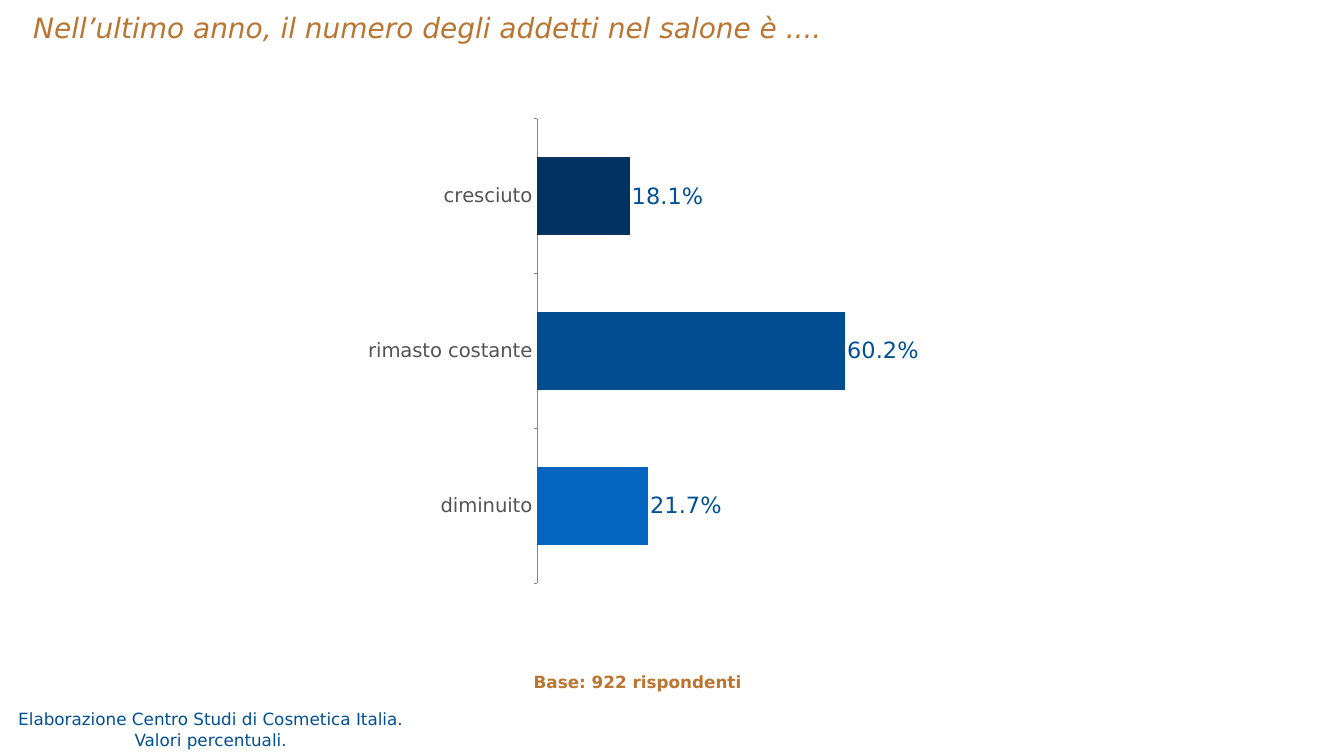
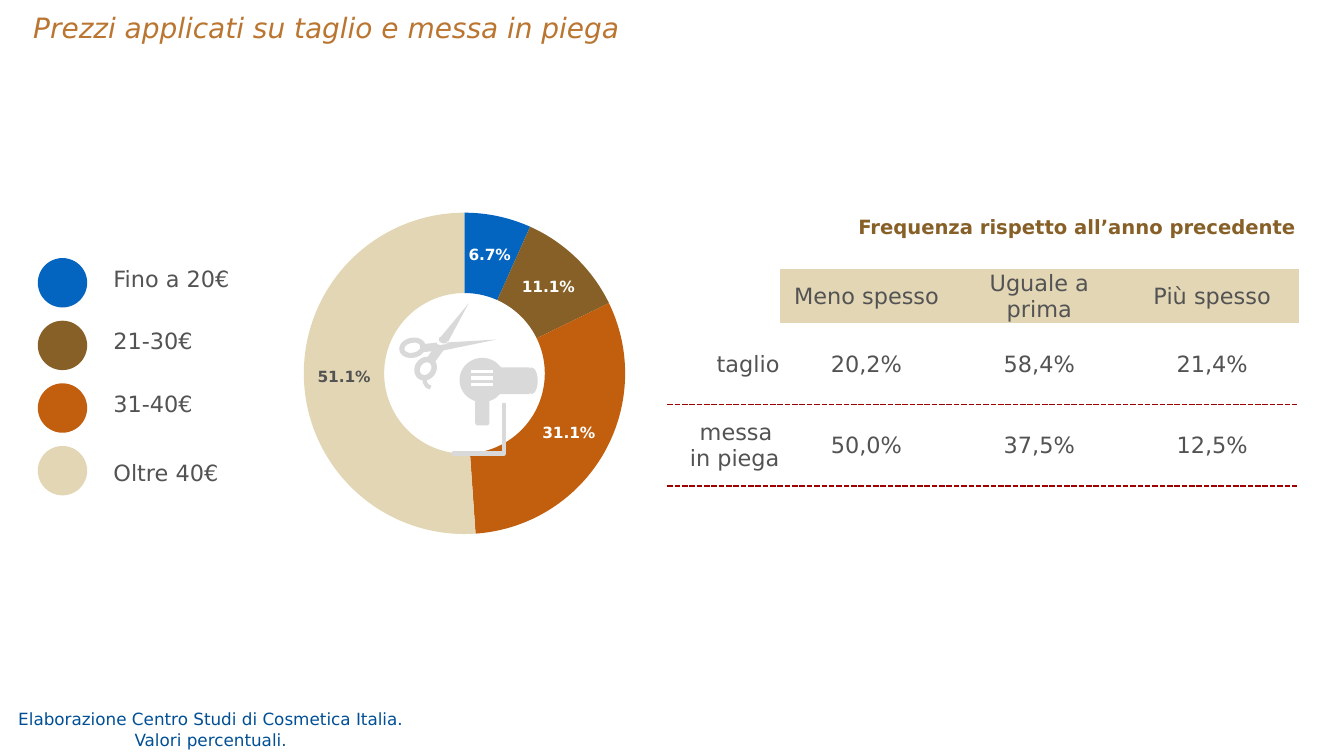
"""Builds two survey slides on salon staff and prices."""
from lxml import etree
from pptx import Presentation
from pptx import util as u
from pptx.chart import data as cd
from pptx.dml import color as col
from pptx.enum import chart as ch, dml, shapes as sh, text as tx
from pptx.oxml import ns

FONT = "DejaVu Sans"
HUE = {
    "copper": "BA7530", "navy": "014F95", "grey": "535353", "axis": "888888",
    "deep": "013260", "royal": "024C90", "blue": "0365C0", "brown": "876028",
    "rust": "C25F0E", "sand": "E2D6B5", "icon": "D9D9D9", "white": "FFFFFF",
    "red": "9E0000", "black": "000000",
}
PLAIN = "{2D5ABB26-0587-4C30-8999-92F81FD0307C}"
LEFT, MID, RIGHT = tx.PP_ALIGN.LEFT, tx.PP_ALIGN.CENTER, tx.PP_ALIGN.RIGHT
BANDS = ("blue", "brown", "rust", "sand")


def rgb(name):
    """Return a palette colour."""
    return col.RGBColor.from_string(HUE[name])


def inch(*nums):
    """Turn numbers into lengths."""
    return [u.Inches(n) for n in nums]


def style(font, size, hue, bold=False, slant=False):
    """Set the look of a font."""
    font.name, font.size = FONT, u.Pt(size)
    font.bold, font.italic = bold, slant
    font.color.rgb = rgb(hue)


def write(frame, words, size, hue, align=LEFT, space=None, **look):
    """Fill a text frame and style its lines."""
    frame.text = words
    for para in frame.paragraphs:
        para.alignment = align
        if space:
            para.line_spacing = space
        for run in para.runs:
            style(run.font, size, hue, **look)


def label(slide, box, words, size, hue, **look):
    """Add a text box whose text sits in the middle."""
    frame = slide.shapes.add_textbox(*inch(*box)).text_frame
    frame.word_wrap = True
    frame.auto_size = tx.MSO_AUTO_SIZE.SHAPE_TO_FIT_TEXT
    frame.vertical_anchor = tx.MSO_ANCHOR.MIDDLE
    frame.margin_left = frame.margin_right = u.Inches(0.06)
    frame.margin_top = frame.margin_bottom = u.Inches(0.06)
    write(frame, words, size, hue, **look)


def common(slide, title):
    """Add the title and the source footer."""
    label(slide, (0.6, 0.07, 25.44, 0.83), title, 40, "copper", space=1.2, slant=True)
    label(slide, (-0.03, 14.01, 8.42, 0.92),
          "Elaborazione Centro Studi di Cosmetica Italia.\nValori percentuali.",
          24, "navy", align=MID)


def plot_box(chart, *spot):
    """Fix the inner plot area as shares of the chart."""
    area = chart._chartSpace.chart.plotArea
    for old in area.findall(ns.qn("c:layout")):
        area.remove(old)
    layout = etree.Element(ns.qn("c:layout"))
    manual = etree.SubElement(layout, ns.qn("c:manualLayout"))
    pairs = [("layoutTarget", "inner"), ("xMode", "edge"), ("yMode", "edge")]
    for tag, val in pairs + list(zip("xywh", spot)):
        etree.SubElement(manual, ns.qn("c:" + tag)).set("val", str(val))
    area.insert(0, layout)


def graph(slide, box, kind, cats, vals, hues, spot):
    """Add a one-series percentage chart with coloured points."""
    data = cd.CategoryChartData(number_format="0.0%")
    data.categories = cats
    data.add_series("Series 1", vals)
    chart = slide.shapes.add_chart(kind, *inch(*box), data).chart
    chart.has_title = chart.has_legend = False
    style(chart.font, 24, "black")
    plot_box(chart, *spot)
    plot = chart.plots[0]
    for num, hue in enumerate(hues):
        fill = plot.series[0].points[num].format.fill
        fill.solid()
        fill.fore_color.rgb = rgb(hue)
    tags = plot.series[0].data_labels
    tags.show_value = True
    tags.number_format, tags.number_format_is_linked = "0.0%", False
    return chart, plot, tags


def bars(slide, box):
    """Add the bar chart of staff trends."""
    chart, plot, tags = graph(
        slide, box, ch.XL_CHART_TYPE.BAR_CLUSTERED,
        ("cresciuto", "rimasto costante", "diminuito"), (0.181, 0.602, 0.217),
        ("deep", "royal", "blue"), (0.443, 0, 0.463, 0.973))
    plot.gap_width, plot.vary_by_categories = 100, False
    style(tags.font, 32, "navy")
    tags.position = ch.XL_LABEL_POSITION.OUTSIDE_END
    names, scale = chart.category_axis, chart.value_axis
    names.reverse_order = True
    names.major_tick_mark = ch.XL_TICK_MARK.OUTSIDE
    names.format.line.color.rgb = rgb("axis")
    names.format.line.width = u.Pt(0.75)
    style(names.tick_labels.font, 28, "grey")
    scale.visible = scale.has_major_gridlines = False
    scale.minimum_scale, scale.maximum_scale = 0, 0.7


def ring(slide, box):
    """Add the doughnut of price bands."""
    _, plot, tags = graph(
        slide, box, ch.XL_CHART_TYPE.DOUGHNUT, ("1", "2", "3", "4"),
        (0.067, 0.111, 0.311, 0.511), BANDS, (0.14, 0, 0.755, 0.956))
    plot._element.find(ns.qn("c:holeSize")).set("val", "65")
    style(tags.font, 22, "white", bold=True)
    style(plot.series[0].points[3].data_label.font, 22, "grey", bold=True)


def solid(shapes, kind, box, hue, turn=0):
    """Add a filled shape without outline."""
    shape = shapes.add_shape(kind, *inch(*box))
    shape.shadow.inherit = False
    shape.fill.solid()
    shape.fill.fore_color.rgb = rgb(hue)
    shape.line.fill.background()
    shape.rotation = turn
    return shape


def stroke(shape, hue, width):
    """Leave only an outline on a shape."""
    shape.shadow.inherit = False
    shape.fill.background()
    shape.line.color.rgb = rgb(hue)
    shape.line.width = u.Pt(width)


def grid(slide, box, cols, rows):
    """Add a table without style."""
    table = slide.shapes.add_table(len(rows), len(cols), *inch(*box)).table
    table._tbl.tblPr.find(ns.qn("a:tableStyleId")).text = PLAIN
    table.first_row = table.horz_banding = False
    for part, size in list(zip(table.columns, cols)):
        part.width = u.Inches(size)
    for part, size in zip(table.rows, rows):
        part.height = u.Inches(size)
    for cell in table.iter_cells():
        cell.vertical_anchor = tx.MSO_ANCHOR.MIDDLE
    return table


def legend(slide, left, top):
    """Add the price bands beside their dots."""
    rows = (1.24, 1.24, 1.24, 1.52)
    table = grid(slide, (left + 1.4, top, 2.63, sum(rows)), (2.63,), rows)
    names = ("Fino a 20€", "21-30€", "31-40€", "Oltre 40€")
    for num, (name, hue) in enumerate(zip(names, BANDS)):
        cell = table.cell(num, 0)
        cell.fill.background()
        write(cell.text_frame, name, 32, "grey")
        solid(slide.shapes, sh.MSO_SHAPE.OVAL,
              (left, top + 0.19 + 1.243 * num, 0.98, 0.98), hue)


def dash(cell, *sides):
    """Draw dashed borders on the given sides of a cell."""
    props = cell._tc.get_or_add_tcPr()
    for side in sides:
        line = etree.SubElement(props, ns.qn("a:ln" + side), w=str(u.Pt(3)))
        fill = etree.SubElement(line, ns.qn("a:solidFill"))
        etree.SubElement(fill, ns.qn("a:srgbClr"), val=HUE["red"])
        etree.SubElement(line, ns.qn("a:prstDash"), val="sysDash")


def visits(slide, left, top):
    """Add the table of visit frequency and its heading."""
    rows = (
        ("", "Meno spesso", "Uguale a prima", "Più spesso"),
        ("taglio", "20,2%", "58,4%", "21,4%"),
        ("messa \nin piega", "50,0%", "37,5%", "12,5%"),
    )
    table = grid(slide, (left, top, 12.53, 4.29), (2.24, 3.43, 3.43, 3.43),
                 (1.07, 1.61, 1.61))
    for row, words in enumerate(rows):
        for num, word in enumerate(words):
            cell = table.cell(row, num)
            cell.margin_left = cell.margin_right = cell.margin_top = u.Inches(0.01)
            cell.margin_bottom = 0
            dash(cell, *("", "B", "TB")[row])
            if row == 0 and num:
                cell.fill.solid()
                cell.fill.fore_color.rgb = rgb("sand")
            else:
                cell.fill.background()
            write(cell.text_frame, word, 32, "grey", align=MID if num else RIGHT)
    label(slide, (left + 0.74, top - 1.21, 11.78, 0.66),
          "Frequenza rispetto all’anno precedente", 28, "brown",
          align=RIGHT, space=1.2, bold=True)


def shears(slide, left, top):
    """Draw the scissors."""
    shapes, kind = slide.shapes.add_group_shape().shapes, sh.MSO_SHAPE
    parts = (
        (kind.ISOSCELES_TRIANGLE, 1.04, 0, 0.18, 0.9, 34, "icon"),
        (kind.ISOSCELES_TRIANGLE, 1.3, 0.31, 0.16, 1.12, 82.5, "icon"),
        (kind.RECTANGLE, 0.42, 0.87, 0.44, 0.16, 353.7, "icon"),
        (kind.DONUT, 0, 0.76, 0.53, 0.4, 348.4, "icon"),
        (kind.OVAL, 0.75, 0.82, 0.22, 0.08, 352.1, "white"),
        (kind.OVAL, 0.78, 0.75, 0.18, 0.12, 23.2, "icon"),
        (kind.RECTANGLE, 0.52, 1.01, 0.37, 0.18, 305.8, "icon"),
        (kind.DONUT, 0.28, 1.16, 0.49, 0.43, 304.8, "icon"),
    )
    for form, x, y, wide, high, turn, hue in parts:
        solid(shapes, form, (left + x, top + y, wide, high), hue, turn)
    tail = shapes.add_shape(kind.ARC, *inch(left + 0.5, top + 1.38, 0.28, 0.37))
    tail.rotation = 184.5
    stroke(tail, "icon", 6)


def curve(start, *bends, steps=10):
    """Return points along joined cubic curves."""
    dots = [start]
    for one, two, end in bends:
        first = dots[-1]
        for num in range(1, steps + 1):
            t = num / steps
            s = 1 - t
            dots.append(tuple(
                s**3 * a + 3 * s * s * t * b + 3 * s * t * t * c + t**3 * d
                for a, b, c, d in zip(first, one, two, end)))
    return dots


def dryer(slide, left, top):
    """Draw the hair dryer with its cable."""
    shapes, kind = slide.shapes.add_group_shape().shapes, sh.MSO_SHAPE
    for form, x, y, wide, high in (
            (kind.OVAL, 1.31, 0.19, 0.24, 0.53),
            (kind.RECTANGLE, 0.63, 0.19, 0.76, 0.53),
            (kind.OVAL, 0, 0, 0.9, 0.88)):
        solid(shapes, form, (left + x, top + y, wide, high), "icon")
    for num in range(3):
        y = top + 0.27 + 0.13 * num
        vent = shapes.add_connector(
            sh.MSO_CONNECTOR.STRAIGHT, *inch(left + 0.23, y, left + 0.66, y))
        vent.line.color.rgb = rgb("white")
        vent.line.width = u.Pt(4.5)
        vent.line.dash_style = dml.MSO_LINE.SOLID
        etree.SubElement(vent._element.spPr, ns.qn("a:effectLst"))
    solid(shapes, kind.ROUNDED_RECTANGLE, (left + 0.31, top + 0.61, 0.28, 0.73), "icon")
    dots = [(left + x, top + y) for x, y in curve(
        (0.39, 0.72),
        ((0.43, 0.98), (0.46, 1.24), (0.45, 1.39)),
        ((0.44, 1.54), (0.33, 1.53), (0.32, 1.63)),
        ((0.31, 1.72), (0.36, 1.85), (0.41, 1.98)))]
    pen = shapes.build_freeform(*dots[0], scale=u.Inches(1))
    pen.add_line_segments(dots[1:], close=False)
    stroke(pen.convert_to_shape(), "icon", 6)


def staff(slide):
    """Build the slide on staff numbers."""
    common(slide, "Nell’ultimo anno, il numero degli addetti nel salone è ....")
    bars(slide, (3.86, 2.35, 15.35, 9.48))
    label(slide, (10.53, 13.22, 4.73, 0.55), "Base: 922 rispondenti", 24,
          "copper", space=1.2, bold=True)


def prices(slide):
    """Build the slide on prices."""
    ring(slide, (4.56, 4.22, 9, 6.67))
    legend(slide, 0.75, 4.93)
    shears(slide, 7.92, 5.94)
    dryer(slide, 9.12, 7.1)
    common(slide, "Prezzi applicati su taglio e messa in piega")
    visits(slide, 13.24, 5.34)


def main():
    """Build and save the deck."""
    deck = Presentation()
    deck.slide_width, deck.slide_height = inch(26.67, 15)
    for build in (staff, prices):
        build(deck.slides.add_slide(deck.slide_layouts[6]))
    deck.save("out.pptx")


if __name__ == "__main__":
    main()
